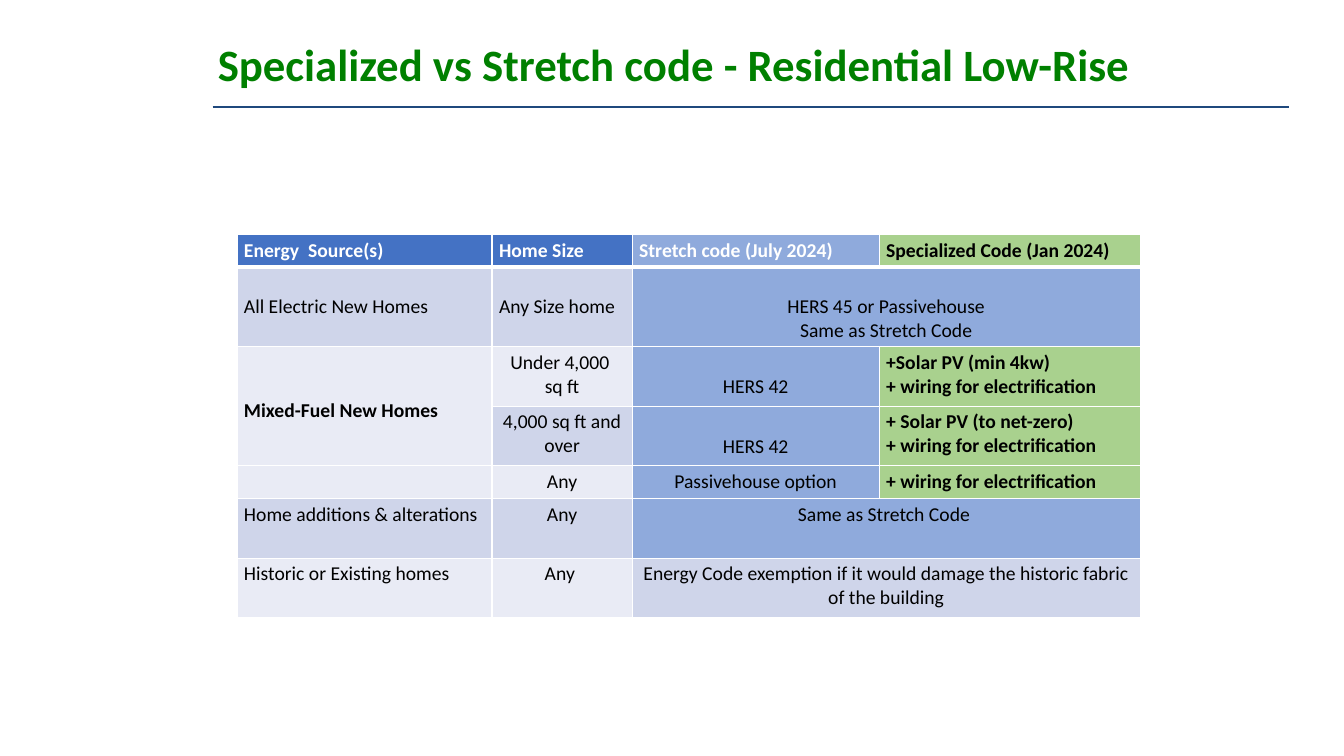
from lxml import etree
from pptx import Presentation
from pptx import util as u
from pptx.dml import color
from pptx.enum import shapes, text
from pptx.oxml import ns

BLUE, PALE, LIGHT = "4472C4", "CFD5EA", "E9EBF5"
STRETCH, SPECIAL = "8FAADC", "A9D18E"
BLACK, WHITE = "000000", "FFFFFF"
LINE_HEIGHT = 0.24


def rgb(value):
    return color.RGBColor.from_string(value)


class CodeSlide:
    """Holds the font and the current slide and draws its elements."""

    def __init__(self, deck, font="Calibri"):
        self.font = font
        self.slide = deck.slides.add_slide(deck.slide_layouts[5])

    def add_words(self, paragraph, words, size, ink, bold=False):
        run = paragraph.add_run()
        run.text = words
        run.font.name, run.font.size, run.font.bold = self.font, u.Pt(size), bold
        run.font.color.rgb = rgb(ink)

    def title(self, words, left, top, width, height):
        title = self.slide.shapes.title
        title.left, title.top = u.Inches(left), u.Inches(top)
        title.width, title.height = u.Inches(width), u.Inches(height)
        title.text_frame.vertical_anchor = text.MSO_ANCHOR.MIDDLE
        paragraph = title.text_frame.paragraphs[0]
        paragraph.alignment = text.PP_ALIGN.LEFT
        paragraph.line_spacing = 0.9
        self.add_words(paragraph, words, 32, "008000", True)

    def rule(self, left, right, top, ink):
        rule = self.slide.shapes.add_connector(
            shapes.MSO_CONNECTOR.STRAIGHT,
            u.Inches(left), u.Inches(top), u.Inches(right), u.Inches(top))
        rule.line.color.rgb = rgb(ink)
        rule.line.width = u.Pt(1.5)
        etree.SubElement(rule._element.spPr, ns.qn("a:effectLst"))

    def table(self, left, top, widths, heights):
        table = self.slide.shapes.add_table(
            len(heights), len(widths), u.Inches(left), u.Inches(top),
            u.Inches(sum(widths)), u.Inches(sum(heights))).table
        for column, width in zip(table.columns, widths):
            column.width = u.Inches(width)
        for row, height in zip(table.rows, heights):
            row.height = u.Inches(height)
        return table

    def borders(self, cell, bottom):
        properties = cell._tc.get_or_add_tcPr()
        for side, width in zip("LRTB", (1, 1, 1, bottom)):
            line = etree.SubElement(properties, ns.qn(f"a:ln{side}"), w=str(u.Pt(width)))
            fill = etree.SubElement(line, ns.qn("a:solidFill"))
            etree.SubElement(fill, ns.qn("a:srgbClr"), val=WHITE)

    def cell(self, cell, lines, fill, ink=BLACK, bold=False, centred=False, drop=0, bottom=1):
        self.borders(cell, bottom)
        cell.fill.solid()
        cell.fill.fore_color.rgb = rgb(fill)
        cell.margin_left = cell.margin_right = u.Inches(0.07)
        cell.margin_top = u.Inches(0.04 + drop * LINE_HEIGHT if lines else 0)
        cell.margin_bottom = u.Inches(0.04 if lines else 0)
        frame = cell.text_frame
        for index, words in enumerate(lines):
            paragraph = frame.add_paragraph() if index else frame.paragraphs[0]
            paragraph.alignment = text.PP_ALIGN.CENTER if centred else text.PP_ALIGN.LEFT
            self.add_words(paragraph, words, 14, ink, bold)


HEADINGS = [
    ("Energy  Source(s)", BLUE, WHITE),
    ("Home Size", BLUE, WHITE),
    ("Stretch code (July 2024)", STRETCH, WHITE),
    ("Specialized Code (Jan 2024)", SPECIAL, BLACK),
]
WIRING = "+ wiring for electrification"
SOURCES = [
    (1, ["All Electric New Homes"], PALE, 1, False),
    (2, ["Mixed-Fuel New Homes"], LIGHT, 2, True),
    (4, [], LIGHT, 0, False),
    (5, ["Home additions & alterations"], PALE, 0, False),
    (6, ["Historic or Existing homes"], LIGHT, 0, False),
]
SIZES = [
    (["Any Size home"], PALE, False, 1),
    (["Under 4,000 ", "sq ft"], LIGHT, True, 0),
    (["4,000 sq ft and over"], PALE, True, 0),
    (["Any"], LIGHT, True, 0),
    (["Any"], PALE, True, 0),
    (["Any "], LIGHT, True, 0),
]
SHARED_RULES = [
    (1, ["HERS 45 or Passivehouse", "Same as Stretch Code"], STRETCH, 1),
    (5, ["Same as Stretch Code "], STRETCH, 0),
    (6, ["Energy Code exemption if it would damage the historic fabric of the building"], PALE, 0),
]
MIXED_FUEL_RULES = [
    (2, "HERS 42", 1, ["+Solar PV (min 4kw)", WIRING]),
    (3, "HERS 42", 1, ["+ Solar PV (to net-zero)", WIRING]),
    (4, "Passivehouse option", 0, [WIRING]),
]


def main():
    deck = Presentation()
    deck.slide_width, deck.slide_height = u.Inches(13.33), u.Inches(7.5)
    page = CodeSlide(deck)
    page.title("Specialized vs Stretch code - Residential Low-Rise", 2.06, 0.25, 10.61, 0.83)
    page.rule(2.11, 12.78, 1.06, "1F497D")

    codes = page.table(2.35, 2.33, [2.53, 1.39, 2.45, 2.59],
                       [0.3, 0.78, 0.59, 0.59, 0.33, 0.59, 0.59])
    codes.cell(2, 0).merge(codes.cell(3, 0))
    for column, (heading, fill, ink) in enumerate(HEADINGS):
        page.cell(codes.cell(0, column), [heading], fill, ink, bold=True, bottom=3)
    for row, source, fill, drop, bold in SOURCES:
        page.cell(codes.cell(row, 0), source, fill, bold=bold, drop=drop)
    for row, (size, fill, centred, drop) in enumerate(SIZES, 1):
        page.cell(codes.cell(row, 1), size, fill, centred=centred, drop=drop)
    for row, rule, fill, drop in SHARED_RULES:
        codes.cell(row, 2).merge(codes.cell(row, 3))
        page.cell(codes.cell(row, 2), rule, fill, centred=True, drop=drop)
    for row, stretch, drop, specialized in MIXED_FUEL_RULES:
        page.cell(codes.cell(row, 2), [stretch], STRETCH, centred=True, drop=drop)
        page.cell(codes.cell(row, 3), specialized, SPECIAL, bold=True)

    deck.save("out.pptx")


if __name__ == "__main__":
    main()
